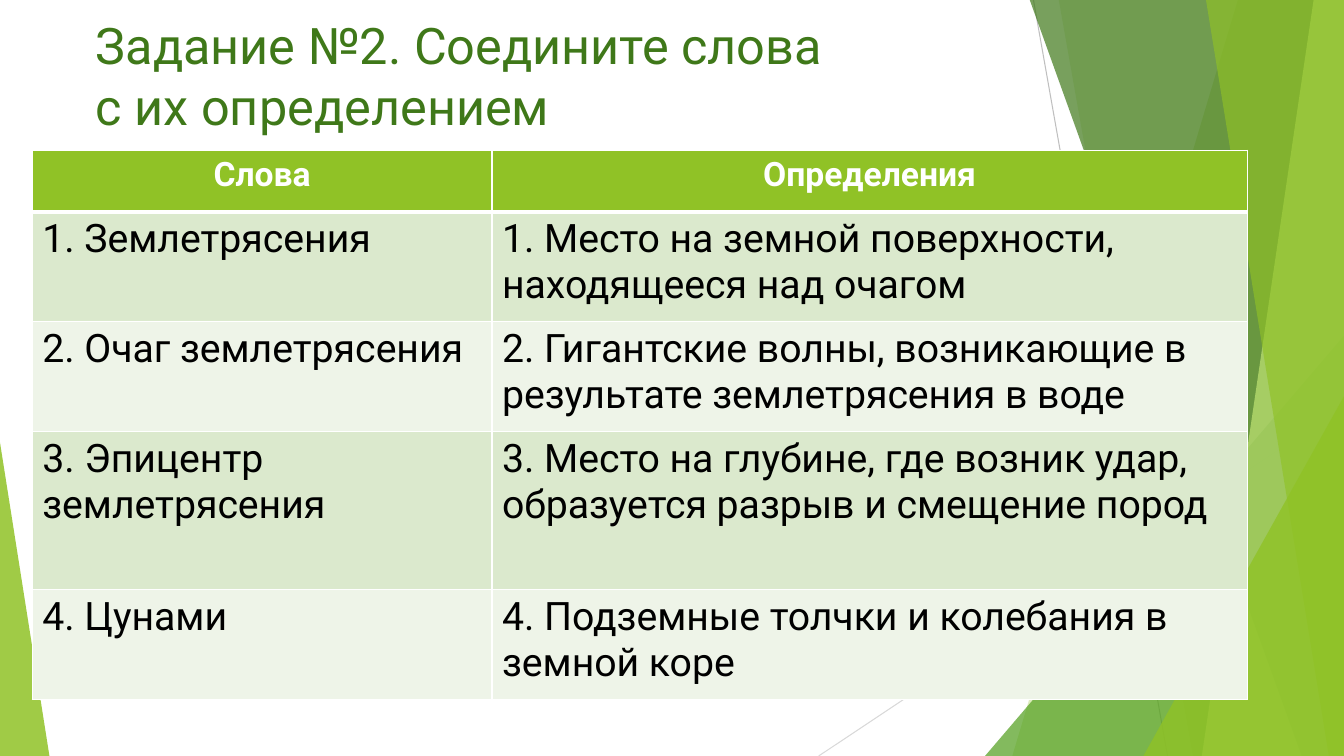
from pptx import Presentation, util as u
from pptx.dml.color import RGBColor
from pptx.enum import shapes, text
from pptx.oxml import parse_xml
from pptx.oxml.ns import nsdecls

deck = Presentation()
deck.slide_width, deck.slide_height = u.Inches(13.33), u.Inches(7.5)
slide = deck.slides.add_slide(deck.slide_layouts[5])
tree = slide.shapes


def tint(fill, color, alpha=100):
    fill.solid()
    fill.fore_color.rgb = RGBColor.from_string(color)
    if alpha < 100:
        node = fill._xPr.find(".//{*}srgbClr")
        node.append(parse_xml(f'<a:alpha {nsdecls("a")} val="{alpha * 1000}"/>'))


def write(para, words, **style):
    run = para.add_run()
    run.text = words
    color = style.pop("color")
    for name, value in {"name": "Roboto", **style}.items():
        setattr(run.font, name, value)
    tint(run.font.fill, color)


rays = [
    (10.25, 0, 11.58, 7.5, "BFBFBF"),
    (13.33, 4.03, 8.12, 7.5, "D9D9D9"),
]
for left, top, right, low, color in rays:
    ray = tree.add_connector(
        shapes.MSO_CONNECTOR.STRAIGHT, *map(u.Inches, (left, top, right, low))
    )
    tint(ray.line.fill, color)
    ray.line.width = u.Pt(0.75)
    ray._element.spPr.append(parse_xml(f'<a:effectLst {nsdecls("a")}/>'))

bands = [
    ("blade", 12.28, 10.04, "90C226", 30),
    ("blade", 10.5, 11.83, "90C226", 20),
    ("wedge", (9.77, 3.33, 3.56, 4.17), 1, "54A021", 72),
    ("blade", 10.21, 12.91, "3F7819", 70),
    ("blade", 13.03, 11.92, "C0E474", 70),
    ("blade", 11.96, 13.18, "90C226", 65),
    ("wedge", (11.34, 3.93, 1.99, 3.57), 1, "90C226", 80),
    ("wedge", (0, 4.39, 0.49, 3.11), 0, "90C226", 85),
]
for kind, first, second, color, alpha in bands:
    if kind == "blade":
        pen = tree.build_freeform(u.Inches(first), u.Inches(-0.01))
        points = [(13.33, -0.01), (13.33, 7.5), (second, 7.5)]
        pen.add_line_segments([(u.Inches(x), u.Inches(y)) for x, y in points])
        band = pen.convert_to_shape()
    else:
        band = tree.add_shape(
            shapes.MSO_SHAPE.ISOSCELES_TRIANGLE, *map(u.Inches, first)
        )
        band.adjustments[0] = second
    tint(band.fill, color, alpha)
    band.line.fill.background()
    band.shadow.inherit = False

title = tree.title
title.left, title.top = u.Inches(0.85), u.Inches(0.09)
title.width, title.height = u.Inches(7.43), u.Inches(2.14)
frame = title.text_frame
frame.word_wrap = True
frame.auto_size = text.MSO_AUTO_SIZE.NONE
frame.vertical_anchor = text.MSO_ANCHOR.TOP
para = frame.paragraphs[0]
para.alignment = text.PP_ALIGN.LEFT
write(para, "Задание №2. Соедините слова с их определением",
      size=u.Pt(36), color="3F7819")

rows = [
    ("Слова", "Определения"),
    ("1. Землетрясения", "1. Место на земной поверхности, находящееся над очагом"),
    ("2. Очаг землетрясения",
     "2. Гигантские волны, возникающие в результате землетрясения в воде"),
    ("3. Эпицентр землетрясения",
     "3. Место на глубине, где возник удар, образуется разрыв и смещение пород"),
    ("4. Цунами", "4. Подземные толчки и колебания в земной коре"),
]
table = tree.add_table(
    len(rows), 2, *map(u.Inches, (0.32, 1.49, 12.05, 5.45))
).table
for col, width in zip(table.columns, (4.56, 7.49)):
    col.width = u.Inches(width)
for row, height in zip(table.rows, (0.61, 1.09, 1.09, 1.57, 1.09)):
    row.height = u.Inches(height)

head = {"size": u.Pt(24), "bold": True, "color": "FFFFFF"}
body = {"size": u.Pt(28), "bold": False, "color": "000000"}
for r, words in enumerate(rows):
    for c, word in enumerate(words):
        cell = table.cell(r, c)
        para = cell.text_frame.paragraphs[0]
        para.alignment = text.PP_ALIGN.LEFT if r else text.PP_ALIGN.CENTER
        write(para, word, **(body if r else head))
        edges = {"L": 1, "R": 1, "T": 3 if r == 1 else 1, "B": 1 if r else 3}
        for side, width in edges.items():
            cell._tc.get_or_add_tcPr().append(parse_xml(
                f'<a:ln{side} {nsdecls("a")} w="{u.Pt(width)}"><a:solidFill>'
                f'<a:srgbClr val="FFFFFF"/></a:solidFill></a:ln{side}>'
            ))
        tint(cell.fill, ("EEF4E8", "DBE9CD")[r % 2] if r else "90C226")

deck.save("out.pptx")
